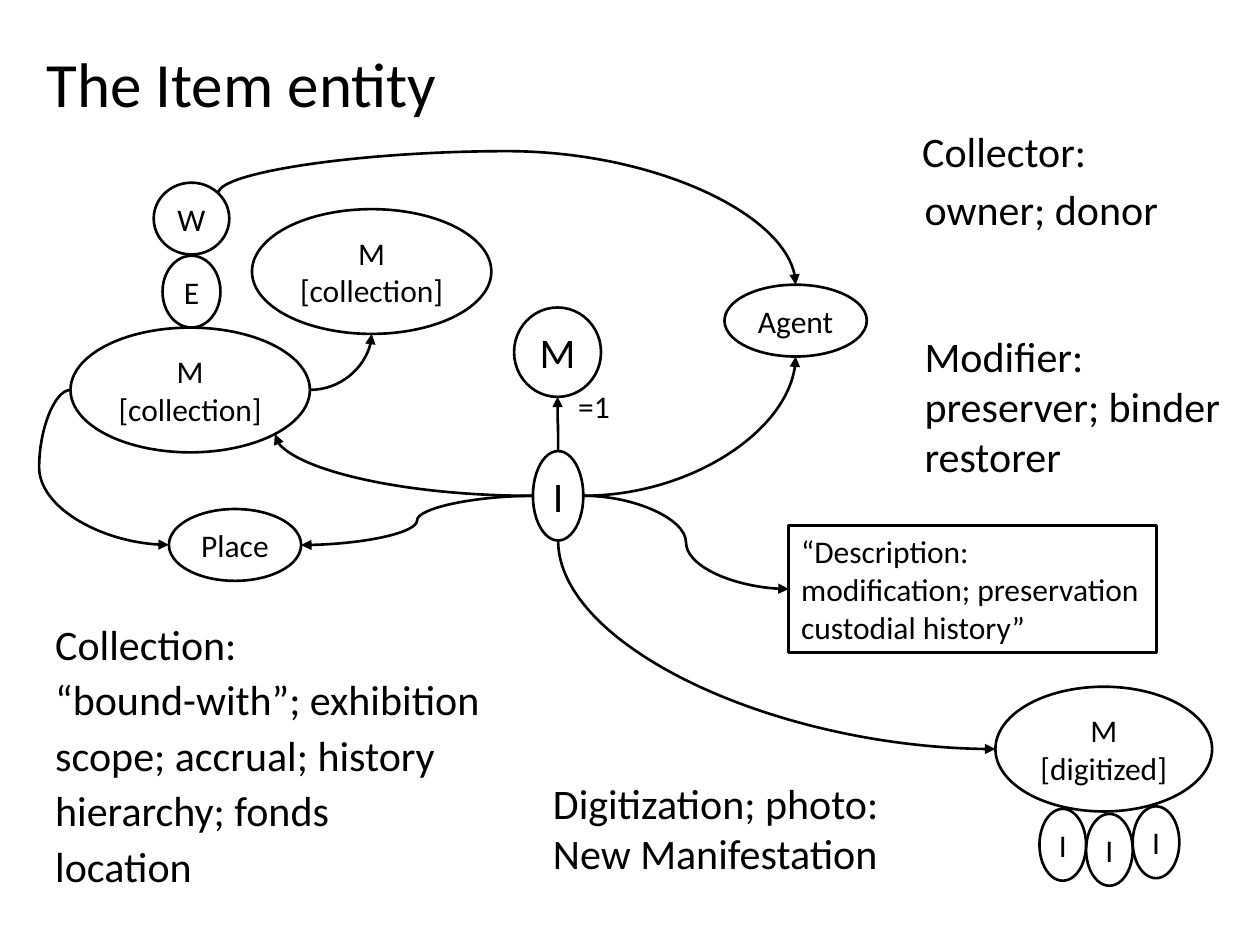
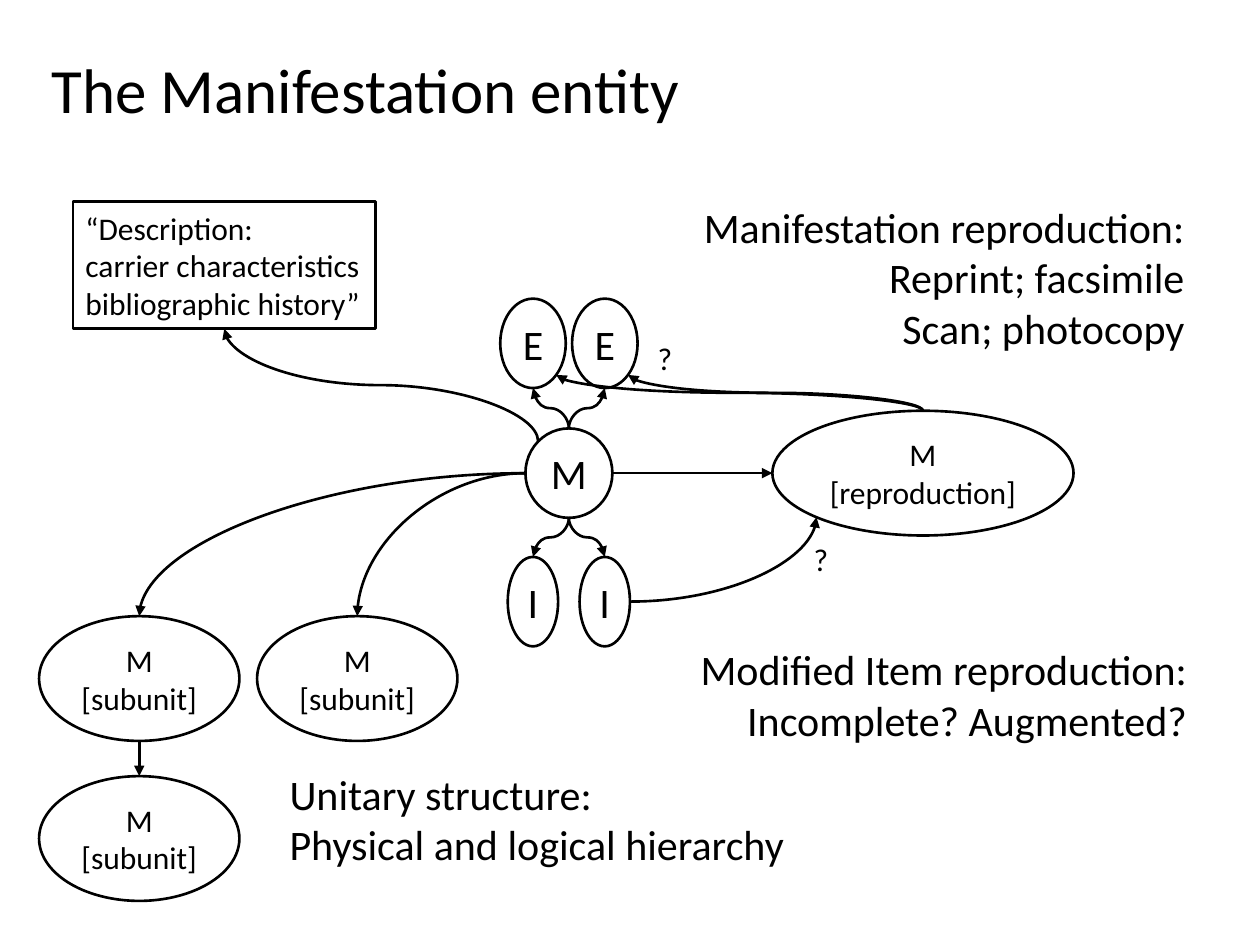
from math import cos, pi, sin

from lxml.etree import SubElement
from pptx import Presentation
from pptx.dml.color import RGBColor
from pptx.enum.shapes import MSO_CONNECTOR, MSO_SHAPE
from pptx.enum.text import MSO_AUTO_SIZE, PP_ALIGN
from pptx.oxml.ns import qn
from pptx.util import Inches, Pt

OVAL, RECT = MSO_SHAPE.OVAL, MSO_SHAPE.RECTANGLE
CURVE = MSO_CONNECTOR.CURVE
LEFT, CENTER, RIGHT = PP_ALIGN.LEFT, PP_ALIGN.CENTER, PP_ALIGN.RIGHT
FIT = MSO_AUTO_SIZE.SHAPE_TO_FIT_TEXT
COLORS = {"ink": "000000"}
INK = RGBColor.from_string(COLORS["ink"])
FONT = "Calibri"
TITLE, LARGE, SMALL = 36, 24, 18
LINE = Pt(1.5)
OVAL_SITES = ["top", "top left", "left", "bottom left",
              "bottom", "bottom right", "right", "top right"]
RECT_SITES = ["top", "left", "bottom", "right"]


def place(slide, outline, box, text, size, align=LEFT):
    frame = [Inches(v) for v in box]
    if outline is None:
        item = slide.shapes.add_textbox(*frame)
    else:
        item = slide.shapes.add_shape(outline, *frame)
        item.shadow.inherit = False
        item.fill.background()
        item.line.color.rgb = INK
        item.line.width = LINE
    item.text_frame.text = text
    item.text_frame.word_wrap = False
    item.text_frame.auto_size = FIT
    for paragraph in item.text_frame.paragraphs:
        paragraph.alignment = align
        for run in paragraph.runs:
            run.font.name = FONT
            run.font.size = Pt(size)
            run.font.color.rgb = INK
    return item


def link(slide, start, start_site, end, end_site, bend=None):
    points, glue = [], []
    for item, site in ((start, start_site), (end, end_site)):
        angle = pi / 2 + OVAL_SITES.index(site) * pi / 4
        points.append((item.left + item.width / 2 * (1 + cos(angle)),
                       item.top + item.height / 2 * (1 - sin(angle))))
        sites = RECT_SITES if item.auto_shape_type == RECT else OVAL_SITES
        glue.append((item.shape_id, sites.index(site)))
    (x1, y1), (x2, y2) = points
    dx, dy = round(x2 - x1), round(y2 - y1)
    if start_site not in ("left", "right"):
        width, height = abs(dy), abs(dx)
        turn = 270 if dx * dy > 0 else 90
        flip_h = dy > 0 if turn == 270 else dy < 0
        flip_v = dx < 0 if turn == 270 else dx > 0
    else:
        width, height = abs(dx), abs(dy)
        turn = 180 if dx < 0 else 0
        flip_h = False
        flip_v = dy > 0 if turn == 180 else dy < 0
    left = round((x1 + x2 - width) / 2)
    top = round((y1 + y2 - height) / 2)
    arrow = slide.shapes.add_connector(CURVE, left, top, left + width, top + height)
    arrow.line.color.rgb = INK
    arrow.line.width = LINE
    properties = arrow._element.spPr
    frame = properties.find(qn("a:xfrm"))
    frame.set("rot", str(turn * 60000))
    frame.set("flipH", str(int(flip_h)))
    frame.set("flipV", str(int(flip_v)))
    geometry = properties.find(qn("a:prstGeom"))
    if bend is None:
        geometry.set("prst", "curvedConnector2")
    else:
        SubElement(geometry.find(qn("a:avLst")), qn("a:gd"),
                   name="adj1", fmla=f"val {round(bend * 100000)}")
    SubElement(properties.find(qn("a:ln")), qn("a:tailEnd"), type="triangle")
    SubElement(properties, qn("a:effectLst"))
    ends = arrow._element.find(qn("p:nvCxnSpPr")).find(qn("p:cNvCxnSpPr"))
    for tag, (shape_id, index) in zip(("a:stCxn", "a:endCxn"), glue):
        SubElement(ends, qn(tag), id=str(shape_id), idx=str(index))


prs = Presentation()
prs.slide_width, prs.slide_height = Inches(10), Inches(7.5)
blank = prs.slide_layouts[6]

item_slide = prs.slides.add_slide(blank)
place(item_slide, None, (0.27, 0.3, 3.33, 0.71), "The Item entity", TITLE)

entities = {}
for key, box, text, size in [
    ("manifestation", (4.08, 2.44, 0.69, 0.71), "M", LARGE),
    ("item", (4.23, 3.58, 0.4, 0.71), "I", LARGE),
    ("collection", (0.56, 2.6, 1.9, 0.99), "M\n[collection]", SMALL),
    ("expression", (1.29, 2.03, 0.46, 0.57), "E", SMALL),
    ("work", (1.22, 1.45, 0.6, 0.57), "W", SMALL),
    ("parent", (2, 1.66, 1.9, 0.99), "M\n[collection]", SMALL),
    ("place", (1.34, 4.04, 1.05, 0.57), "Place", SMALL),
    ("agent", (5.75, 2.26, 1.13, 0.57), "Agent", SMALL),
    ("digitized", (7.9, 5.45, 1.72, 0.99), "M\n[digitized]", SMALL),
]:
    entities[key] = place(item_slide, OVAL, box, text, size, CENTER)
for number, top in enumerate((6.42, 6.46, 6.4)):
    place(item_slide, OVAL, (8.25 + 0.37 * number, top, 0.37, 0.57), "I", SMALL, CENTER)
entities["description"] = place(
    item_slide, RECT, (6.26, 4.17, 2.92, 1.01),
    "“Description:\nmodification; preservation\ncustodial history”", SMALL)

for start, start_site, end, end_site, bend in [
    ("item", "top", "manifestation", "bottom", 0.5),
    ("item", "left", "collection", "bottom right", None),
    ("item", "right", "agent", "bottom", None),
    ("collection", "right", "parent", "bottom", None),
    ("item", "left", "place", "right", 0.5),
    ("collection", "left", "place", "left", -0.32),
    ("work", "top right", "agent", "top", -0.46),
    ("item", "right", "description", "left", 0.5),
    ("item", "bottom", "digitized", "left", None),
]:
    link(item_slide, entities[start], start_site, entities[end], end_site, bend)

place(item_slide, None, (4.49, 3.02, 0.46, 0.4), "=1", SMALL)
for row, (text, width) in enumerate([
    ("Collection:", 1.66),
    ("“bound-with”; exhibition", 3.6),
    ("scope; accrual; history", 3.24),
    ("hierarchy; fonds", 2.4),
    ("location", 1.3),
]):
    place(item_slide, None, (0.34, 4.86 + 0.44 * row, width, 0.5), text, LARGE)
for box, text in [
    ((7.22, 0.95, 1.52, 0.5), "Collector:"),
    ((7.24, 1.41, 2.07, 0.5), "owner; donor"),
    ((7.24, 2.57, 2.57, 1.31), "Modifier:\npreserver; binder\nrestorer"),
    ((4.29, 6.12, 2.81, 0.91), "Digitization; photo:\nNew Manifestation"),
]:
    place(item_slide, None, box, text, LARGE)

manifestation_slide = prs.slides.add_slide(blank)
place(manifestation_slide, None, (0.31, 0.35, 5.23, 0.71), "The Manifestation entity", TITLE)

entities = {}
for key, box, text, size in [
    ("manifestation", (4.17, 3.4, 0.69, 0.71), "M", LARGE),
    ("first expression", (3.97, 2.37, 0.52, 0.71), "E", LARGE),
    ("second expression", (4.54, 2.37, 0.52, 0.71), "E", LARGE),
    ("first item", (4.03, 4.42, 0.4, 0.71), "I", LARGE),
    ("second item", (4.6, 4.42, 0.4, 0.71), "I", LARGE),
    ("first subunit", (0.31, 4.89, 1.59, 0.99), "M\n[subunit]", SMALL),
    ("second subunit", (2.04, 4.89, 1.59, 0.99), "M\n[subunit]", SMALL),
    ("lower subunit", (0.31, 6.16, 1.59, 0.99), "M\n[subunit]", SMALL),
    ("reproduction", (6.13, 3.26, 2.39, 0.99), "M\n[reproduction]", SMALL),
]:
    entities[key] = place(manifestation_slide, OVAL, box, text, size, CENTER)
entities["description"] = place(
    manifestation_slide, RECT, (0.58, 1.6, 2.4, 1.01),
    "“Description:\ncarrier characteristics\nbibliographic history”", SMALL)

for start, start_site, end, end_site, bend in [
    ("manifestation", "top", "first expression", "bottom", 0.5),
    ("manifestation", "top", "second expression", "bottom", 0.5),
    ("manifestation", "bottom", "first item", "top", 0.5),
    ("manifestation", "bottom", "second item", "top", 0.5),
    ("manifestation", "left", "first subunit", "top", None),
    ("manifestation", "left", "second subunit", "top", None),
    ("manifestation", "right", "reproduction", "left", 0.5),
    ("manifestation", "top left", "description", "bottom", 0.5),
    ("first subunit", "bottom", "lower subunit", "top", 0.5),
    ("second item", "right", "reproduction", "bottom left", None),
    ("reproduction", "top", "first expression", "bottom right", 0.5),
    ("reproduction", "top", "second expression", "bottom right", 0.5),
]:
    link(manifestation_slide, entities[start], start_site, entities[end], end_site, bend)

for left, top in ((6.36, 4.24), (5.12, 2.64)):
    place(manifestation_slide, None, (left, top, 0.32, 0.4), "?", SMALL)
for box, text, align in [
    ((2.2, 6.05, 4.16, 0.91), "Unitary structure:\nPhysical and logical hierarchy", LEFT),
    ((5.42, 5.06, 4.1, 0.91), "Modified Item reproduction:\nIncomplete? Augmented?", RIGHT),
    ((5.44, 1.55, 4.06, 1.31),
     "Manifestation reproduction:\nReprint; facsimile\nScan; photocopy", RIGHT),
]:
    place(manifestation_slide, None, box, text, LARGE, align)

prs.save("out.pptx")
